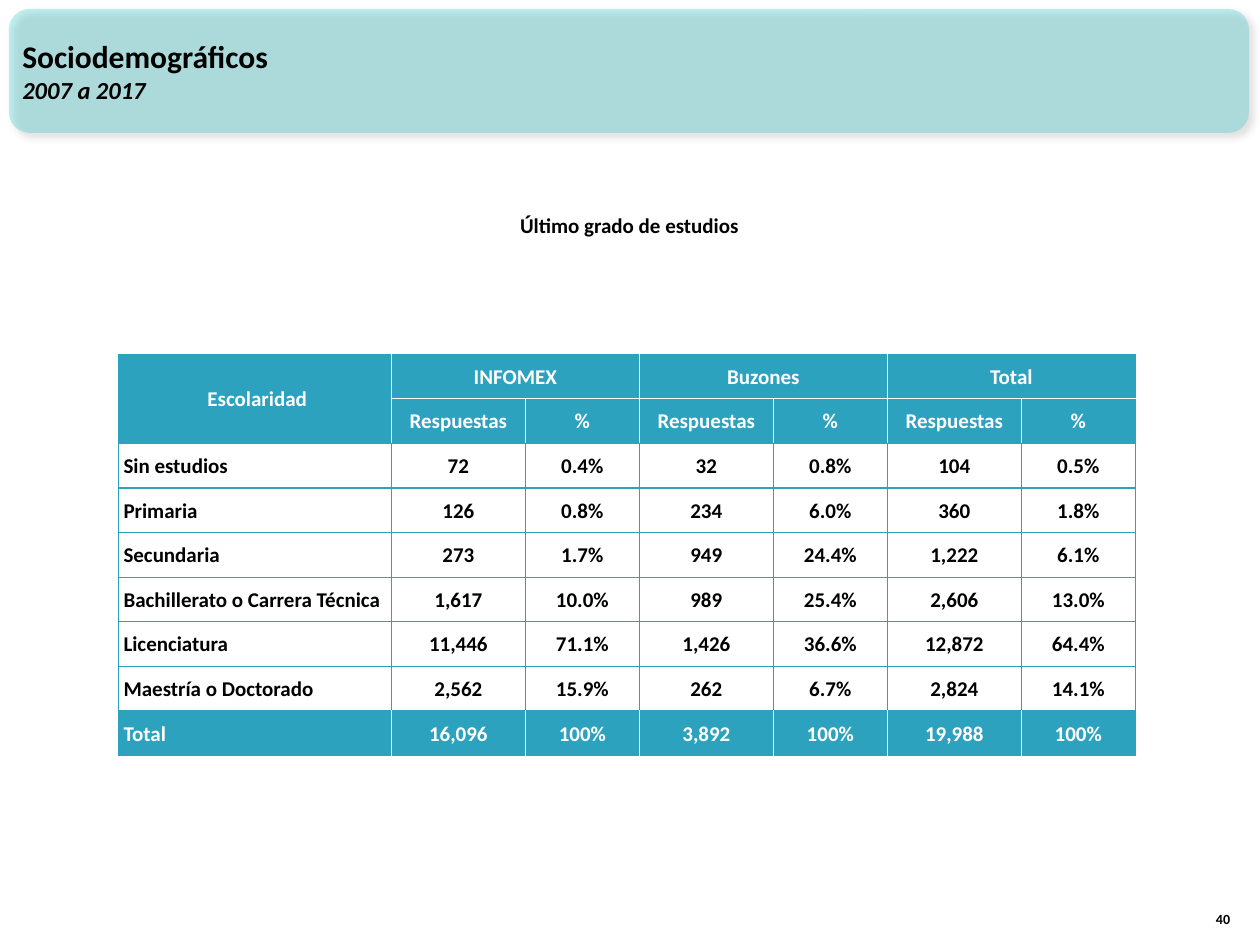
from dataclasses import dataclass

from lxml.etree import SubElement
from pptx import Presentation
from pptx.dml.color import RGBColor
from pptx.enum.shapes import MSO_SHAPE as Shape
from pptx.enum.text import MSO_ANCHOR as Anchor, PP_ALIGN as Align
from pptx.oxml import parse_xml
from pptx.oxml.ns import nsdecls, qn
from pptx.util import Cm, Pt


@dataclass(frozen=True)
class Theme:
    font: str = "Calibri"
    banner: str = "33CCCC"
    accent: str = "2DA2BF"
    ink: str = "000000"
    light: str = "FFFFFF"
    title: int = 18
    period: int = 14
    body: int = 12
    small: int = 8
    border: float = 0.75


THEME = Theme()

GROUPS = ["INFOMEX", "Buzones", "Total"]
MEASURES = ["Respuestas", "%"]
LEVELS = [
    ["Sin estudios", "72", "0.4%", "32", "0.8%", "104", "0.5%"],
    ["Primaria", "126", "0.8%", "234", "6.0%", "360", "1.8%"],
    ["Secundaria", "273", "1.7%", "949", "24.4%", "1,222", "6.1%"],
    ["Bachillerato o Carrera Técnica", "1,617", "10.0%", "989", "25.4%", "2,606", "13.0%"],
    ["Licenciatura", "11,446", "71.1%", "1,426", "36.6%", "12,872", "64.4%"],
    ["Maestría o Doctorado", "2,562", "15.9%", "262", "6.7%", "2,824", "14.1%"],
    ["Total", "16,096", "100%", "3,892", "100%", "19,988", "100%"],
]


def write(paragraph, text, size=THEME.body, color=THEME.ink, align=Align.LEFT, italic=False):
    paragraph.alignment = align
    run = paragraph.add_run()
    run.text = text
    font = run.font
    font.name, font.size, font.bold, font.italic = THEME.font, Pt(size), True, italic
    font.color.rgb = RGBColor.from_string(color)


def add_text_frame(slide, left, top, width, height, anchor=Anchor.TOP):
    box = slide.shapes.add_textbox(Cm(left), Cm(top), Cm(width), Cm(height))
    frame = box.text_frame
    frame.word_wrap = True
    frame.vertical_anchor = anchor
    return frame


def add_banner(slide, left, top, width, height):
    # Translucent rounded panel with a soft shadow
    panel = slide.shapes.add_shape(
        Shape.ROUNDED_RECTANGLE, Cm(left), Cm(top), Cm(width), Cm(height))
    panel.shadow.inherit = False
    panel.fill.solid()
    panel.fill.fore_color.rgb = RGBColor.from_string(THEME.banner)
    panel.line.fill.background()
    properties = panel._element.spPr
    color = properties.find(qn("a:solidFill"))[0]
    SubElement(color, qn("a:alpha"), val="30000")
    properties.find(qn("a:effectLst")).append(parse_xml(
        f'<a:outerShdw {nsdecls("a")} blurRad="{Pt(4)}" dist="{Pt(3)}" dir="2700000" '
        f'algn="tl" rotWithShape="0"><a:srgbClr val="{THEME.ink}">'
        '<a:alpha val="40000"/></a:srgbClr></a:outerShdw>'))

    # Heading and period
    frame = add_text_frame(slide, left + 0.02, top + 0.05, width - 1.7, height - 0.1, Anchor.MIDDLE)
    write(frame.paragraphs[0], "Sociodemográficos", size=THEME.title)
    write(frame.add_paragraph(), "2007 a 2017", size=THEME.period, italic=True)


def add_caption(slide, left, top, width, height):
    frame = add_text_frame(slide, left, top, width, height)
    write(frame.paragraphs[0], "Último grado de estudios", align=Align.CENTER)


def add_page_number(slide, left, top, width, height):
    frame = add_text_frame(slide, left, top, width, height, Anchor.BOTTOM)
    write(frame.paragraphs[0], "40", size=THEME.small, align=Align.RIGHT)


def set_borders(cell, white_sides):
    properties = cell._tc.get_or_add_tcPr()
    for index, side in enumerate("LRTB"):
        color = THEME.light if side in white_sides else THEME.accent
        properties.insert(index, parse_xml(
            f'<a:ln{side} {nsdecls("a")} w="{Pt(THEME.border)}"><a:solidFill>'
            f'<a:srgbClr val="{color}"/></a:solidFill></a:ln{side}>'))


def format_cell(cell, text, filled, label, white_sides):
    cell.margin_left = Cm(0.1 if label else 0.03)
    cell.margin_right = cell.margin_top = Cm(0.03)
    cell.margin_bottom = 0
    cell.vertical_anchor = Anchor.MIDDLE
    if filled:
        cell.fill.solid()
        cell.fill.fore_color.rgb = RGBColor.from_string(THEME.accent)
    else:
        cell.fill.background()
    write(cell.text_frame.paragraphs[0], text,
          color=THEME.light if filled else THEME.ink,
          align=Align.LEFT if label else Align.CENTER)
    set_borders(cell, white_sides)


def add_education_table(slide, left, top, width, height):
    group_row = [" Escolaridad"] + [text for group in GROUPS for text in (group, "")]
    rows = [group_row, [""] + MEASURES * len(GROUPS)] + LEVELS
    last_row, last_column = len(rows) - 1, len(group_row) - 1
    table = slide.shapes.add_table(
        len(rows), len(group_row), Cm(left), Cm(top), Cm(width), Cm(height)).table
    table.first_row = table.horz_banding = False

    # Column widths and row heights
    label_width, count_width = 5.5, 2.7
    share_width = (width - label_width) / len(GROUPS) - count_width
    widths = [label_width] + [count_width, share_width] * len(GROUPS)
    for column, column_width in zip(table.columns, widths):
        column.width = Cm(column_width)
    for row in table.rows:
        row.height = Cm(height / len(rows))

    # Merged headings
    table.cell(0, 0).merge(table.cell(1, 0))
    for column in range(1, last_column, 2):
        table.cell(0, column).merge(table.cell(0, column + 1))

    # White rules lie only between filled cells
    for r, values in enumerate(rows):
        filled = r < 2 or r == last_row
        for c, text in enumerate(values):
            cell = table.cell(r, c)
            if cell.is_spanned:
                continue
            right = c + (cell.span_width if cell.is_merge_origin else 1) - 1
            white_sides = ""
            if filled:
                white_sides += "L" if c > 0 else ""
                white_sides += "R" if right < last_column else ""
                white_sides += "T" if r == 1 else ""
                white_sides += "B" if r == 0 and c > 0 else ""
            format_cell(cell, text, filled, c == 0 and r > 1, white_sides)


def main():
    presentation = Presentation()
    presentation.slide_width, presentation.slide_height = Cm(25.4), Cm(19.05)
    slide = presentation.slides.add_slide(presentation.slide_layouts[6])
    add_banner(slide, 0.18, 0.18, 25, 2.5)
    add_page_number(slide, 24.03, 17.8, 1.02, 1.02)
    add_education_table(slide, 2.39, 7.14, 20.5, 8.1)
    add_caption(slide, 2.06, 4.17, 21.26, 0.77)
    presentation.save("out.pptx")


if __name__ == "__main__":
    main()
